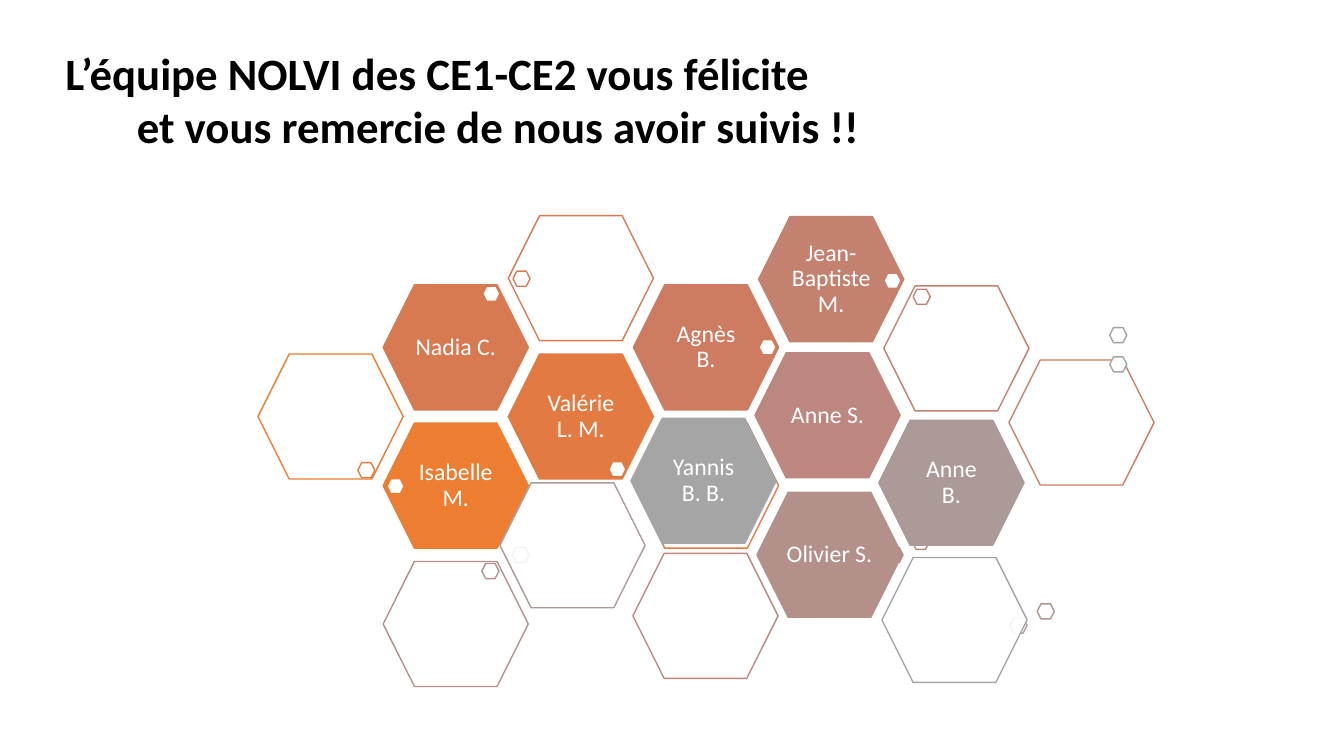
from dataclasses import dataclass

import lxml.etree
import pptx
import pptx.dml.color
import pptx.enum.shapes
import pptx.enum.text
import pptx.oxml.ns
import pptx.util

Pt = pptx.util.Pt
FONT = "Calibri"
WHITE = "FFFFFF"

# Honeycomb grid, in points
LEFT, TOP = 184.3, 154.1
STEP_X, STEP_Y = 89.4, 49.4
CELL = (103.7, 89.3)
DOT = (12.2, 10.8)
LABEL = (72, 61.2)


@dataclass
class Cell:
    col: int
    row: int
    dx: float = 0
    dy: float = 0

    def place(self) -> tuple[float, float]:
        return LEFT + self.col * STEP_X + self.dx, TOP + self.row * STEP_Y + self.dy


@dataclass
class Dot:
    x: float
    y: float
    hue: str


@dataclass
class Mate:
    name: str
    hue: str
    full: Cell
    first: Dot
    bare: Cell
    second: Dot


MATES = [
    Mate("Isabelle M.", "ED7D31", Cell(1, 3), Dot(276.5, 342, "ED7D31"),
         Cell(0, 2), Dot(255.6, 330.5, "E87B39")),
    Mate("Valérie\vL. M.", "E27A42", Cell(2, 2), Dot(434.9, 329.8, "E37A41"),
         Cell(3, 3), Dot(455, 342, "DE7A48")),
    Mate("Nadia C.", "D87A51", Cell(1, 1), Dot(344.9, 204.5, "D97A50"),
         Cell(2, 0), Dot(366.5, 193.7, "D47B57")),
    Mate("Agnès\vB.", "CE7C61", Cell(3, 1), Dot(542.2, 242.6, "CF7C5E"),
         Cell(6, 2, 0, 4.3), Dot(562.3, 254.9, "CB7D65")),
    Mate("Jean-Baptiste\vM.", "C48170", Cell(4, 0, 0, 0.7), Dot(631.4, 195.1, "C7806C"),
         Cell(5, 1, 0, 0.7), Dot(652.3, 206.6, "C28273")),
    Mate("Anne S.", "BC877E", Cell(4, 2, -2.6, -0.9), Dot(651.6, 381.6, "BE857A"),
         Cell(3, 5, -0.4, -5.8), Dot(632.9, 391, "BA8980")),
    Mate("Olivier S.", "B4908B", Cell(4, 4, -1.2), Dot(365.8, 391, "B68C87"),
         Cell(1, 5), Dot(344.2, 402.5, "B3918D")),
    Mate("Anne\vB.", "AC9A99", Cell(5, 3, -3.5, -2.1), Dot(740.9, 431.3, "AF9593"),
         Cell(2, 4, -6, -6.8), Dot(721.4, 441.4, "AC9A99")),
    Mate("Yannis\vB. B.", "A5A5A5", Cell(3, 3, -1.8, -3.5), Dot(792.7, 234, "A89F9F"),
         Cell(5, 5, -1.3, -2.9), Dot(792.7, 254.9, "A5A5A5")),
]


def color(hue: str) -> pptx.dml.color.RGBColor:
    return pptx.dml.color.RGBColor.from_string(hue)


def style(par, size: float, hue: str, bold: bool = False) -> None:
    for run in par.runs:
        run.font.name = FONT
        run.font.size = Pt(size)
        run.font.bold = bold
        run.font.color.rgb = color(hue)


def draw_hex(shapes, place: tuple, size: tuple, fill: str, line: str):
    kind = pptx.enum.shapes.MSO_SHAPE.HEXAGON
    shape = shapes.add_shape(kind, *map(Pt, place + size))
    shape.shadow.inherit = False
    shape.fill.solid()
    shape.fill.fore_color.rgb = color(fill)
    shape.line.color.rgb = color(line)
    shape.line.width = Pt(1)
    return shape


def draw_dot(shapes, dot: Dot) -> None:
    draw_hex(shapes, (dot.x, dot.y), DOT, WHITE, dot.hue)


def draw_name(shapes, place: tuple, name: str) -> None:
    x = place[0] + (CELL[0] - LABEL[0]) / 2
    y = place[1] + (CELL[1] - LABEL[1]) / 2
    frame = shapes.add_textbox(*map(Pt, (x, y) + LABEL)).text_frame
    frame.word_wrap = True
    frame.vertical_anchor = pptx.enum.text.MSO_ANCHOR.MIDDLE
    frame.margin_left = frame.margin_right = 0
    frame.margin_top = frame.margin_bottom = Pt(1.4)
    par = frame.paragraphs[0]
    par.text = name
    par.alignment = pptx.enum.text.PP_ALIGN.CENTER
    par.line_spacing = 0.9
    style(par, 17, WHITE)


def fade(shape, share: int) -> None:
    qn = pptx.oxml.ns.qn
    tint = shape.fill._xPr.find(qn("a:solidFill"))[0]
    lxml.etree.SubElement(tint, qn("a:alpha"), val=str(share * 1000))


def draw_mate(shapes, mate: Mate) -> None:
    place = mate.full.place()
    draw_hex(shapes, place, CELL, mate.hue, mate.hue)
    draw_name(shapes, place, mate.name)
    draw_dot(shapes, mate.first)
    fade(draw_hex(shapes, mate.bare.place(), CELL, WHITE, mate.hue), 90)
    draw_dot(shapes, mate.second)


def draw_title(shapes) -> None:
    frame = shapes.add_textbox(Pt(39.6), Pt(28.8), Pt(887), Pt(85)).text_frame
    frame.word_wrap = True
    frame.text = ("L’équipe NOLVI des CE1-CE2 vous félicite\n"
                  "et vous remercie de nous avoir suivis !!")
    for par in frame.paragraphs:
        style(par, 32, "000000", True)
    # Second line stands in from the left
    frame.paragraphs[1]._p.get_or_add_pPr().set("marL", str(Pt(51)))


def main() -> None:
    deck = pptx.Presentation()
    deck.slide_width, deck.slide_height = Pt(960), Pt(540)
    slide = deck.slides.add_slide(deck.slide_layouts[6])

    # Honeycomb of team members
    comb = slide.shapes.add_group_shape()
    for mate in MATES:
        draw_mate(comb.shapes, mate)

    # Heading
    draw_title(slide.shapes)
    deck.save("out.pptx")


if __name__ == "__main__":
    main()
